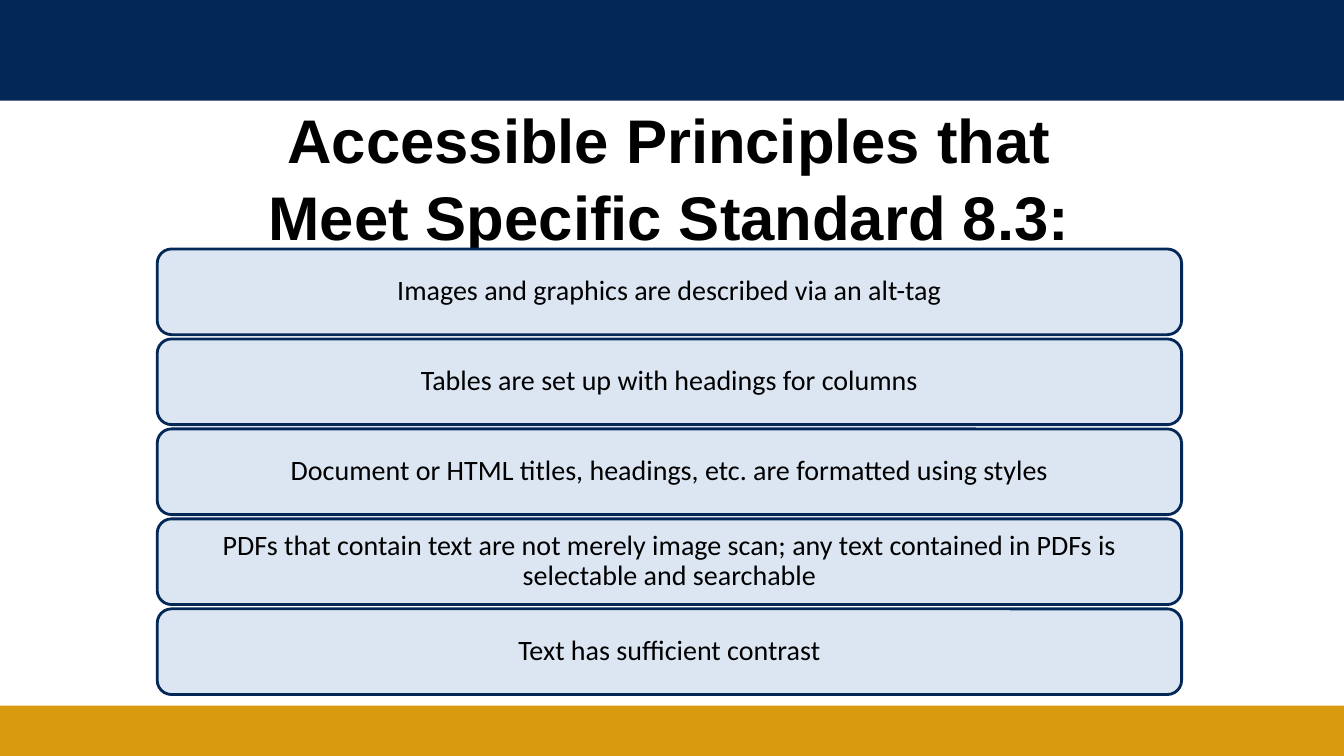
from pptx import Presentation
from pptx.dml.color import RGBColor
from pptx.enum.shapes import MSO_SHAPE
from pptx.enum.text import MSO_ANCHOR, MSO_AUTO_SIZE, PP_ALIGN
from pptx.util import Inches, Pt

RECT = MSO_SHAPE.RECTANGLE
ROUND = MSO_SHAPE.ROUNDED_RECTANGLE
TOP = MSO_ANCHOR.TOP
MIDDLE = MSO_ANCHOR.MIDDLE
CENTER = PP_ALIGN.CENTER
NO_FIT = MSO_AUTO_SIZE.NONE

COLORS = {"navy": "032858", "gold": "D89B0F", "pale": "DCE6F2", "ink": "000000"}
WIDTH, HEIGHT = 13.33, 7.5
TITLE = "Accessible Principles that Meet Specific Standard 8.3:"
RULES = [
    "Images and graphics are described via an alt-tag",
    "Tables are set up with headings for columns",
    "Document or HTML titles, headings, etc. are formatted using styles",
    "PDFs that contain text are not merely image scan; any text contained in PDFs is "
    "selectable and searchable",
    "Text has sufficient contrast",
]


def color(name):
    return RGBColor.from_string(COLORS[name])


def add_box(slide, kind, box, fill):
    shape = slide.shapes.add_shape(kind, *map(Inches, box))
    shape.shadow.inherit = False
    shape.fill.solid()
    shape.fill.fore_color.rgb = color(fill)
    shape.line.fill.background()
    return shape


def write(shape, text, face, size, bold, space, anchor, inset):
    frame = shape.text_frame
    frame.word_wrap = True
    frame.auto_size = NO_FIT
    frame.vertical_anchor = anchor
    frame.margin_left = frame.margin_right = Inches(inset)
    frame.margin_top = frame.margin_bottom = Inches(inset / 2)
    para = frame.paragraphs[0]
    para.alignment = CENTER
    para.line_spacing = space
    para.space_before = Pt(0)
    run = para.add_run()
    run.text = text
    run.font.name = face
    run.font.size = Pt(size)
    run.font.bold = bold
    run.font.color.rgb = color("ink")


def add_bands(slide, box):
    left, top, width, height = box
    head, foot = 1, 0.5
    add_box(slide, RECT, (left, top, width, head), "navy")
    add_box(slide, RECT, (left, top + height - foot, width, foot), "gold")


def add_title(slide, box):
    title = slide.shapes.title
    title.left, title.top, title.width, title.height = map(Inches, box)
    write(title, TITLE, "Arial", 44, True, 1.05, TOP, 0.1)


def add_rules(slide, box, tall=0.85):
    left, top, width, height = box
    step = (height - tall) / (len(RULES) - 1)
    for row, text in enumerate(RULES):
        card = add_box(slide, ROUND, (left, top + row * step, width, tall), "pale")
        card.line.color.rgb = color("navy")
        card.line.width = Pt(2)
        write(card, text, "Calibri", 20, False, 0.9, MIDDLE, 0.08)


def main():
    deck = Presentation()
    deck.slide_width = Inches(WIDTH)
    deck.slide_height = Inches(HEIGHT)
    slide = deck.slides.add_slide(deck.slide_layouts[5])
    add_bands(slide, (0, 0, WIDTH, HEIGHT))
    add_title(slide, (2.39, 0.92, 8.5, 1.42))
    add_rules(slide, (1.56, 2.47, 10.16, 4.42))
    deck.save("out.pptx")


if __name__ == "__main__":
    main()
